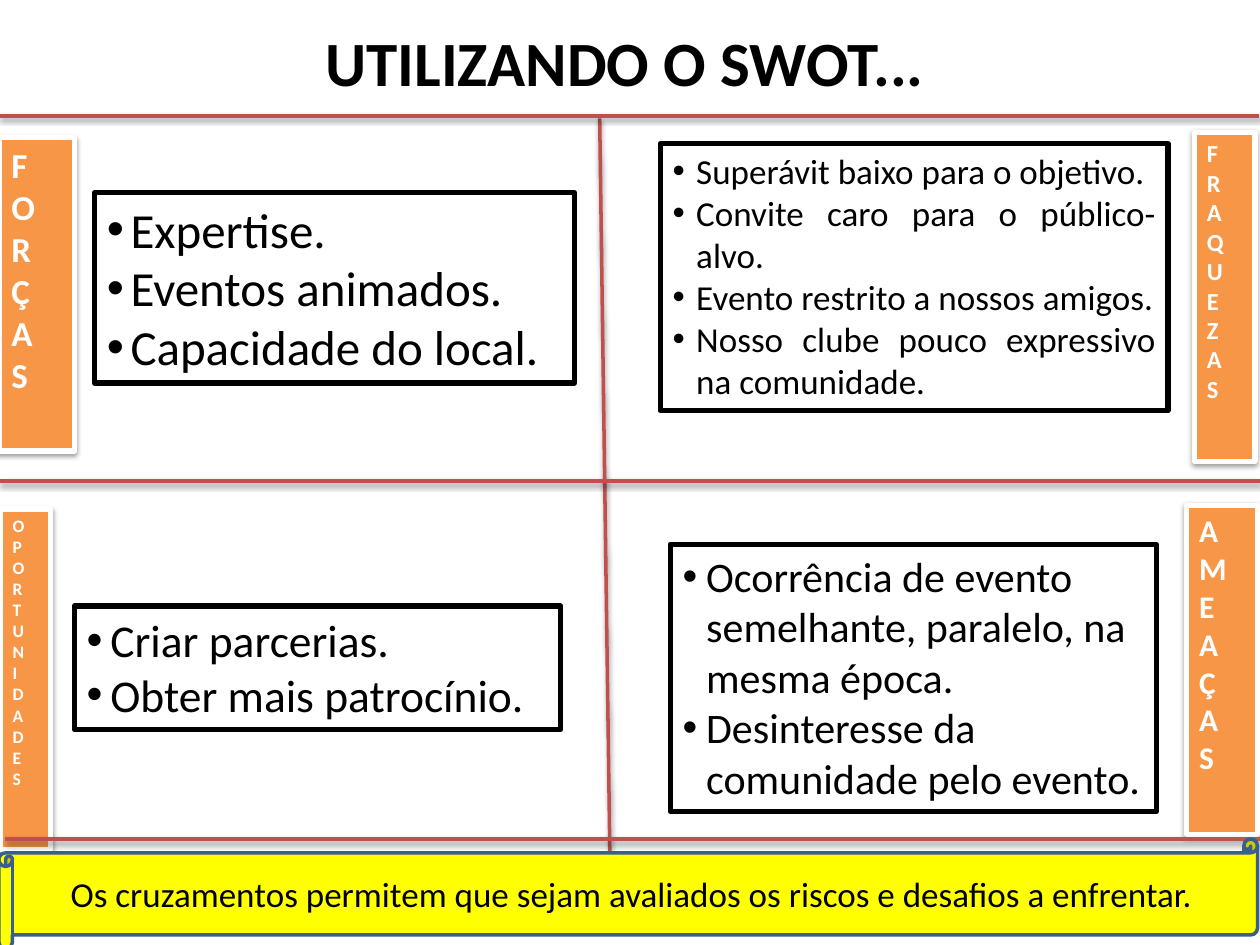
from lxml.etree import SubElement as Sub
from pptx import Presentation
from pptx.dml.color import RGBColor
from pptx.enum.shapes import MSO_CONNECTOR as Conn, MSO_SHAPE as Kind
from pptx.enum.text import MSO_ANCHOR as Anchor, MSO_AUTO_SIZE as Auto, PP_ALIGN as Align
from pptx.oxml.ns import qn
from pptx.util import Pt

BLACK = RGBColor(0x00, 0x00, 0x00)
WHITE = RGBColor(0xFF, 0xFF, 0xFF)
RED = RGBColor(0xC0, 0x50, 0x4D)
ORANGE = RGBColor(0xF7, 0x96, 0x46)
YELLOW = RGBColor(0xFF, 0xFF, 0x00)
BLUE = RGBColor(0x3A, 0x5F, 0x8C)

# Letters stacked downwards: text, size, left, top, width, height
LABELS = [
    ("FORÇAS", 20, -0.5, 78.5, 43.2, 179.3),
    ("FRAQUEZAS", 14, 682.5, 75.6, 34.6, 188),
    ("OPORTUNIDADES", 10, 0.2, 290.9, 28.6, 194.4),
    ("AMEAÇAS", 18, 678.2, 288.7, 40.3, 188),
]

# Bulleted boxes: items, size, alignment, left, top, width, height
LISTS = [
    (["Expertise.", "Eventos animados.", "Capacidade do local."],
     28, Align.LEFT, 54, 110.2, 274.3, 108.7),
    (["Superávit baixo para o objetivo.",
      "Convite caro para o público-alvo.",
      "Evento restrito a nossos amigos.",
      "Nosso clube pouco expressivo na comunidade."],
     20, Align.JUSTIFY, 377.3, 82.1, 290.2, 152.6),
    (["Criar parcerias.", "Obter mais patrocínio."],
     26, Align.LEFT, 42.5, 346.3, 277.9, 70.6),
    (["Ocorrência de evento semelhante, paralelo, na mesma época.",
      "Desinteresse da comunidade pelo evento."],
     24, Align.LEFT, 383, 311, 277.9, 152.6),
]

# Dividers: x1, y1, x2, y2
AXIS = (342.7, 67.7, 348.5, 488.2)
MIDDLE = (0, 275, 720, 275)
EDGES = [(-0.5, 66.2, 719.5, 66.2), (3, 479.5, 723, 479.5)]


def shade(shape):
    """Add a soft shadow below the shape."""
    props = shape._element.spPr
    for old in props.findall(qn("a:effectLst")):
        props.remove(old)
    glow = Sub(Sub(props, qn("a:effectLst")), qn("a:outerShdw"),
               blurRad=str(Pt(3.1)), dist=str(Pt(1.6)), dir="5400000", rotWithShape="0")
    color = Sub(glow, qn("a:srgbClr"), val="000000")
    Sub(color, qn("a:alpha"), val="38000")


def write(shape, lines, size, color=BLACK, bold=False, align=Align.LEFT,
          anchor=Anchor.TOP, bullet=False, wrap=True, fit=False):
    frame = shape.text_frame
    frame.word_wrap = wrap
    frame.vertical_anchor = anchor
    frame.auto_size = Auto.SHAPE_TO_FIT_TEXT if fit else Auto.NONE
    for i, line in enumerate(lines):
        para = frame.add_paragraph() if i else frame.paragraphs[0]
        para.alignment = align
        if bullet:
            props = para._p.get_or_add_pPr()
            props.set("marL", str(Pt(13.5)))
            props.set("indent", str(Pt(-13.5)))
            Sub(props, qn("a:buFont"), typeface="Arial")
            Sub(props, qn("a:buChar"), char="•")
        run = para.add_run()
        run.text = line
        font = run.font
        font.name, font.size, font.bold = "Calibri", Pt(size), bold
        font.color.rgb = color


def block(slide, area, line, width=3, fill=None, kind=Kind.RECTANGLE):
    shape = slide.shapes.add_shape(kind, *map(Pt, area))
    shape.shadow.inherit = False
    if fill is None:
        shape.fill.background()
    else:
        shape.fill.solid()
        shape.fill.fore_color.rgb = fill
    shape.line.color.rgb = line
    shape.line.width = Pt(width)
    return shape


def rule(slide, ends):
    line = slide.shapes.add_connector(Conn.STRAIGHT, *map(Pt, ends))
    line.line.color.rgb = RED
    line.line.width = Pt(2)
    shade(line)


def label(slide, text, size, *area):
    shape = block(slide, area, WHITE, fill=ORANGE)
    shade(shape)
    write(shape, [text], size, color=WHITE, bold=True, wrap=False, fit=True)
    shape.text_frame._txBody.bodyPr.set("vert", "wordArtVert")


def bullets(slide, items, size, align, *area):
    write(block(slide, area, BLACK), items, size, align=align, bullet=True, fit=True)


def main():
    deck = Presentation()
    deck.slide_width, deck.slide_height = Pt(720), Pt(540)
    slide = deck.slides.add_slide(deck.slide_layouts[6])

    # Title
    title = slide.shapes.add_textbox(Pt(133.2), Pt(-0.7), Pt(447.8), Pt(72))
    write(title, ["UTILIZANDO O SWOT..."], 36, bold=True,
          align=Align.CENTER, anchor=Anchor.MIDDLE)

    # Quadrants
    rule(slide, AXIS)
    rule(slide, MIDDLE)
    for item in LABELS:
        label(slide, *item)
    for item in LISTS:
        bullets(slide, *item)
    for ends in EDGES:
        rule(slide, ends)

    # Closing banner
    banner = block(slide, (-0.7, 479.5, 719.3, 62.6), BLUE, width=2, fill=YELLOW,
                   kind=Kind.HORIZONTAL_SCROLL)
    write(banner, ["Os cruzamentos permitem que sejam avaliados os riscos "
                   "e desafios a enfrentar."],
          20, align=Align.CENTER, anchor=Anchor.MIDDLE)

    deck.save("out.pptx")


if __name__ == "__main__":
    main()
